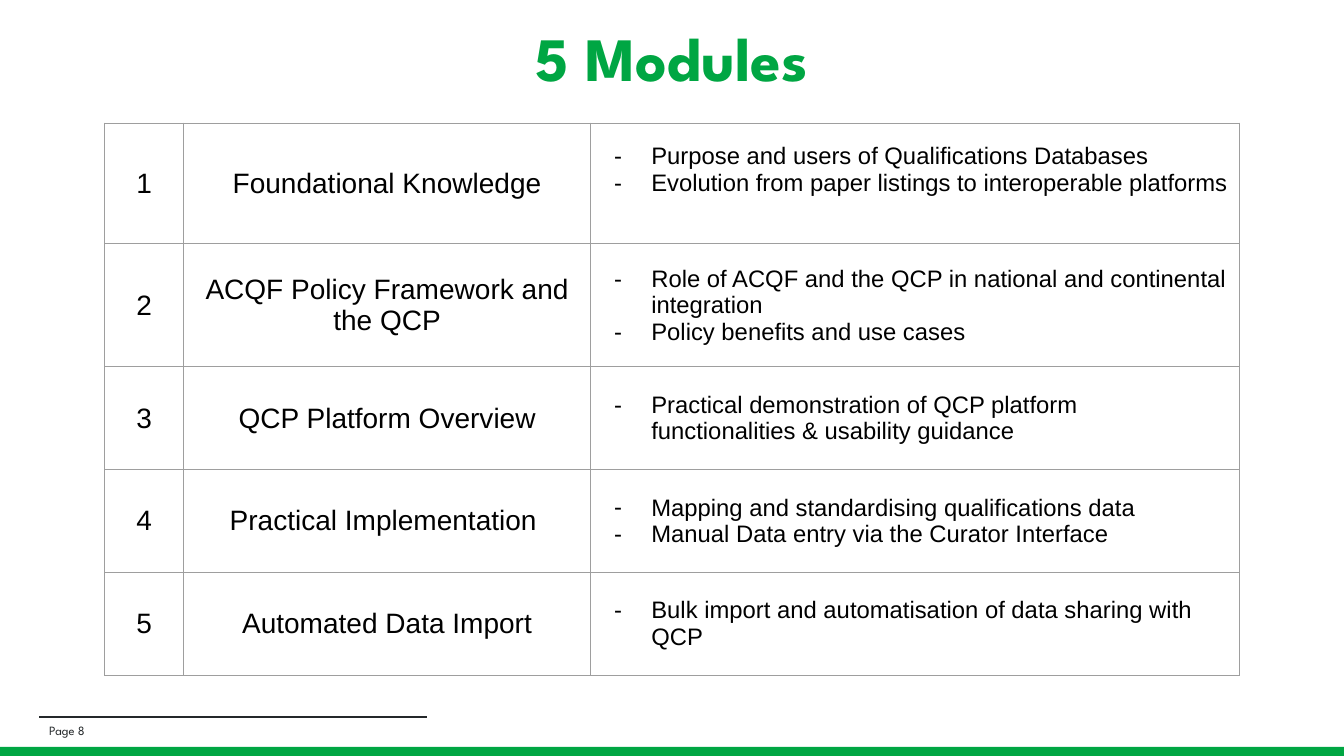
from dataclasses import dataclass

from lxml import etree
from pptx import Presentation
from pptx.dml.color import RGBColor
from pptx.enum.shapes import MSO_CONNECTOR, MSO_SHAPE
from pptx.enum.text import MSO_ANCHOR, MSO_AUTO_SIZE, PP_ALIGN
from pptx.oxml.ns import qn
from pptx.util import Emu, Pt

RECTANGLE = MSO_SHAPE.RECTANGLE
STRAIGHT = MSO_CONNECTOR.STRAIGHT
MIDDLE = MSO_ANCHOR.MIDDLE
NO_AUTOFIT = MSO_AUTO_SIZE.NONE
LEFT, CENTER = PP_ALIGN.LEFT, PP_ALIGN.CENTER

EMU_PER_PX = 9144  # 100 px to the inch
TITLE_ONLY_LAYOUT = 5

GREEN, INK, BLACK, GRAY, WHITE = "00A643", "24282A", "000000", "9E9E9E", "FFFFFF"
BRAND_FONT, TABLE_FONT = "League Spartan", "Arial"
TITLE_FORMAT = {"name": BRAND_FONT, "size": Pt(44), "bold": True}
PAGE_FORMAT = {"name": BRAND_FONT, "size": Pt(9)}
MODULE_FORMAT = {"name": TABLE_FONT, "size": Pt(20)}
TOPIC_FORMAT = {"name": TABLE_FONT, "size": Pt(17)}

COLUMN_WIDTHS = (78, 404, 643)
CELL_MARGIN = 10
BULLET_INDENT, BULLET_HANG = 50, -37


@dataclass(frozen=True)
class Module:
    name: str
    topics: tuple[str, ...]
    height: int = 102
    bottom_margin: int = CELL_MARGIN


MODULES = (
    Module(
        "Foundational Knowledge",
        ("Purpose and users of Qualifications Databases",
         "Evolution from paper listings to interoperable platforms"),
        height=120,
        bottom_margin=37,
    ),
    Module(
        "ACQF Policy Framework and the QCP",
        ("Role of ACQF and the QCP in national and continental integration",
         "Policy benefits and use cases"),
        height=122,
    ),
    Module(
        "QCP Platform Overview",
        ("Practical demonstration of QCP platform functionalities & usability guidance",),
    ),
    Module(
        "Practical Implementation ",
        ("Mapping and standardising qualifications data",
         "Manual Data entry via the Curator Interface"),
    ),
    Module(
        "Automated Data Import",
        ("Bulk import and automatisation of data sharing with QCP",),
    ),
)


def px(length: int) -> Emu:
    return Emu(length * EMU_PER_PX)


def box(left: int, top: int, width: int, height: int) -> tuple[Emu, ...]:
    return px(left), px(top), px(width), px(height)


def color(value: str) -> RGBColor:
    return RGBColor.from_string(value)


def write(paragraph, text: str, text_format: dict, text_color: str, alignment=LEFT) -> None:
    paragraph.alignment = alignment
    run = paragraph.add_run()
    run.text = text
    for attribute, value in text_format.items():
        setattr(run.font, attribute, value)
    run.font.color.rgb = color(text_color)


def add_dash(paragraph) -> None:
    properties = paragraph._p.get_or_add_pPr()
    properties.set("marL", str(px(BULLET_INDENT)))
    properties.set("indent", str(px(BULLET_HANG)))
    bullet_color = etree.SubElement(properties, qn("a:buClr"))
    etree.SubElement(bullet_color, qn("a:srgbClr"), val=BLACK)
    etree.SubElement(properties, qn("a:buFont"), typeface=TABLE_FONT)
    etree.SubElement(properties, qn("a:buChar"), char="-")


def style_cell(cell, bottom_margin: int) -> None:
    cell.vertical_anchor = MIDDLE
    cell.margin_left = cell.margin_right = cell.margin_top = px(CELL_MARGIN)
    cell.margin_bottom = px(bottom_margin)
    properties = cell._tc.get_or_add_tcPr()
    for side in ("lnL", "lnR", "lnT", "lnB"):
        border = etree.SubElement(properties, qn(f"a:{side}"), w=str(Pt(0.75)))
        fill = etree.SubElement(border, qn("a:solidFill"))
        etree.SubElement(fill, qn("a:srgbClr"), val=GRAY)
    cell.fill.background()


def add_footer(slide) -> None:
    bar = slide.shapes.add_shape(RECTANGLE, *box(-3, 741, 1340, 13))
    bar.shadow.inherit = False
    bar.fill.solid()
    bar.fill.fore_color.rgb = color(GREEN)
    bar.line.fill.background()

    rule = slide.shapes.add_connector(STRAIGHT, px(39), px(711), px(424), px(711))
    rule.line.color.rgb = color(INK)
    rule.line.width = Pt(1.5)
    etree.SubElement(rule._element.spPr, qn("a:effectLst"))

    page = slide.shapes.add_textbox(*box(39, 715, 406, 19)).text_frame
    page.word_wrap = True
    page.vertical_anchor = MIDDLE
    write(page.paragraphs[0], "Page 8", PAGE_FORMAT, INK)


def add_title(slide) -> None:
    title = slide.shapes.title
    title.left, title.top, title.width, title.height = box(0, 0, 1333, 122)
    frame = title.text_frame
    frame.word_wrap = True
    frame.auto_size = NO_AUTOFIT
    frame.vertical_anchor = MIDDLE
    frame.paragraphs[0].line_spacing = 0.9
    write(frame.paragraphs[0], "5 Modules", TITLE_FORMAT, GREEN, CENTER)


def add_module_table(slide) -> None:
    height = sum(module.height for module in MODULES)
    frame = slide.shapes.add_table(
        len(MODULES), len(COLUMN_WIDTHS), *box(104, 122, sum(COLUMN_WIDTHS), height))
    table = frame.table
    table.first_row = table.horz_banding = False
    for column, width in zip(table.columns, COLUMN_WIDTHS):
        column.width = px(width)

    for number, (row, module) in enumerate(zip(table.rows, MODULES), start=1):
        row.height = px(module.height)
        number_cell, name_cell, topics_cell = row.cells
        for cell, text in ((number_cell, str(number)), (name_cell, module.name)):
            style_cell(cell, CELL_MARGIN)
            write(cell.text_frame.paragraphs[0], text, MODULE_FORMAT, BLACK, CENTER)

        style_cell(topics_cell, module.bottom_margin)
        topics_frame = topics_cell.text_frame
        for index, topic in enumerate(module.topics):
            paragraph = topics_frame.add_paragraph() if index else topics_frame.paragraphs[0]
            add_dash(paragraph)
            write(paragraph, topic, TOPIC_FORMAT, BLACK)


def main() -> None:
    presentation = Presentation()
    presentation.slide_width, presentation.slide_height = px(1333), px(750)
    slide = presentation.slides.add_slide(presentation.slide_layouts[TITLE_ONLY_LAYOUT])
    slide.background.fill.solid()
    slide.background.fill.fore_color.rgb = color(WHITE)
    add_footer(slide)
    add_title(slide)
    add_module_table(slide)
    presentation.save("out.pptx")


if __name__ == "__main__":
    main()
